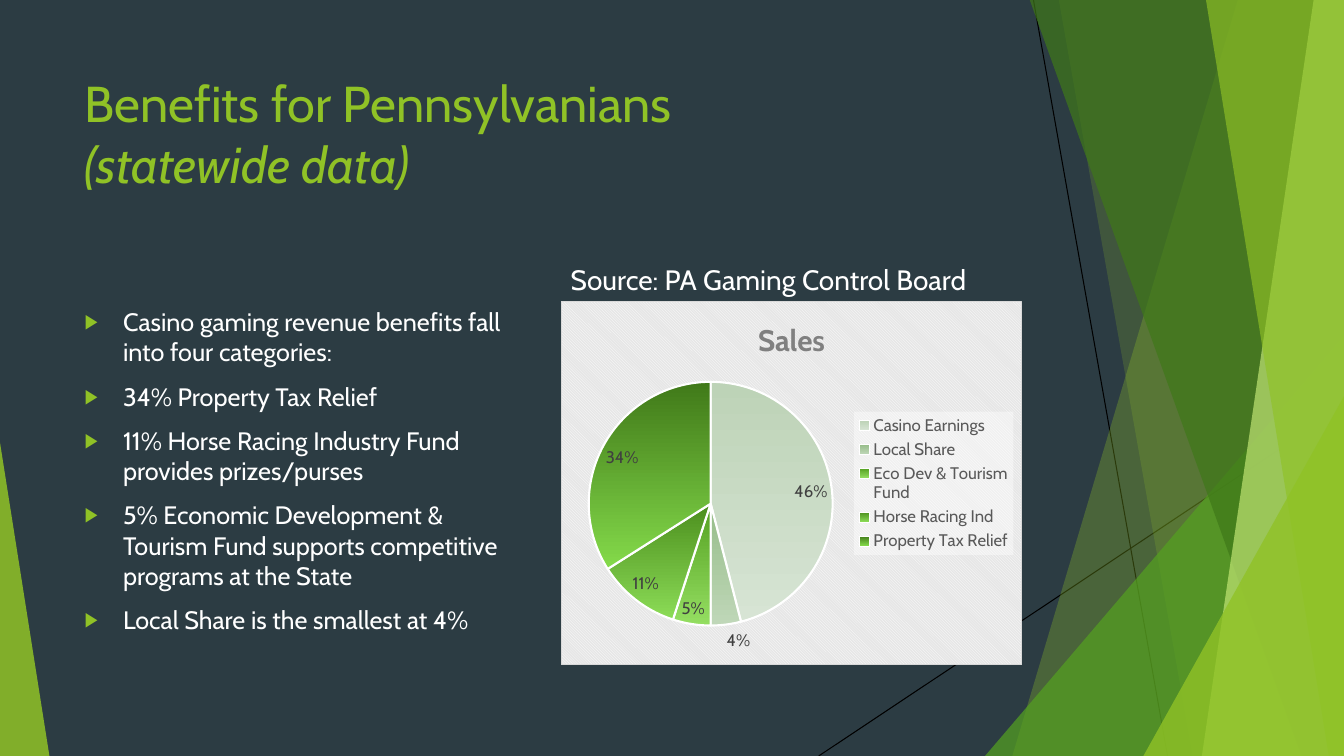
from pptx import Presentation, util as u, oxml
from pptx.chart.data import CategoryChartData
from pptx.dml.color import RGBColor
from pptx.enum import chart as ch, shapes, text
from pptx.oxml.ns import nsdecls, qn

HUES = {
    "back": "2C3C43", "lime": "90C226", "green": "54A021", "dark": "3F7819",
    "pale": "C0E474", "black": "000000", "white": "FFFFFF", "head": "808080",
    "key": "595959", "label": "404040", "edge": "D9D9D9", "panel": "E6E6E6",
}
FONT = "Cabin"
WIDE, HIGH = 13.33, 7.5

# top left, top right, foot right, foot left, hue, alpha
BANDS = [
    (12.28, 10.04, "lime", 30),
    (10.5, 11.83, "lime", 20),
    (10.21, 12.91, "dark", 70),
    (13.03, 11.92, "pale", 70),
    (11.96, 13.18, "lime", 65),
]

SLICES = [
    ("Casino Earnings", 0.46, "BDD3B7", "D7E4D4"),
    ("Local Share", 0.04, "95BC88", "BFD7B8"),
    ("Eco Dev & Tourism Fund", 0.05, "54A021", "94DE61"),
    ("Horse Racing Ind", 0.11, "4B8E1D", "8CDC57"),
    ("Property Tax Relief", 0.34, "407919", "84DA4A"),
]

ITEMS = [
    "Casino gaming revenue benefits fall into four categories:",
    "34% Property Tax Relief",
    "11% Horse Racing Industry Fund provides prizes/purses",
    "5% Economic Development & Tourism Fund supports competitive "
    "programs at the State",
    "Local Share is the smallest at 4%",
]


def rgb(hue):
    return RGBColor.from_string(HUES.get(hue, hue))


def style(font, size, hue, bold=False):
    font.name, font.size, font.bold = FONT, u.Pt(size), bold
    font.color.rgb = rgb(hue)


class Deck:
    """Holds the current slide and draws each kind of element on it."""

    def __init__(self):
        self.prs = Presentation()
        self.prs.slide_width = u.Inches(WIDE)
        self.prs.slide_height = u.Inches(HIGH)
        self.slide = self.prs.slides.add_slide(self.prs.slide_layouts[4])
        self.shapes = self.slide.shapes
        fill = self.slide.background.fill
        fill.solid()
        fill.fore_color.rgb = rgb("back")

    def line(self, *ends):
        line = self.shapes.add_connector(
            shapes.MSO_CONNECTOR.STRAIGHT, *map(u.Inches, ends))
        line.line.color.rgb = rgb("black")
        line.line.width = u.Pt(0.75)
        oxml.xmlchemy.OxmlElement  # noqa
        line.element.spPr.append(
            oxml.parse_xml(f'<a:effectLst {nsdecls("a")}/>'))

    def tint(self, shape, hue, alpha):
        """Fill a shape with a see-through colour and no outline."""
        shape.shadow.inherit = False
        shape.fill.solid()
        shape.fill.fore_color.rgb = rgb(hue)
        shape.line.fill.background()
        color = shape.element.spPr.find(qn("a:solidFill"))[0]
        color.append(oxml.parse_xml(
            f'<a:alpha {nsdecls("a")} val="{alpha * 1000}"/>'))

    def band(self, top, foot, hue, alpha):
        """Draw a facet from a slanted left edge to the slide's right edge."""
        pts = [(top, -0.01), (WIDE, -0.01), (WIDE, HIGH), (foot, HIGH)]
        pts = [(u.Inches(x), u.Inches(y)) for x, y in pts]
        form = self.shapes.build_freeform(*pts[0])
        form.add_line_segments(pts[1:], close=True)
        self.tint(form.convert_to_shape(), hue, alpha)

    def wedge(self, box, tip, hue, alpha):
        shape = self.shapes.add_shape(
            shapes.MSO_SHAPE.ISOSCELES_TRIANGLE, *map(u.Inches, box))
        shape.adjustments[0] = tip
        self.tint(shape, hue, alpha)

    def holder(self, idx, box, anchor):
        """Move a placeholder to its box, in front of what is drawn so far."""
        item = next(p for p in self.slide.placeholders
                    if p.placeholder_format.idx == idx)
        item.left, item.top, item.width, item.height = map(u.Inches, box)
        item.element.getparent().append(item.element)
        frame = item.text_frame
        frame.word_wrap = True
        frame.auto_size = text.MSO_AUTO_SIZE.NONE
        frame.vertical_anchor = anchor
        return frame

    def run(self, para, words, size, hue, slant=False):
        run = para.add_run()
        run.text = words
        style(run.font, size, hue)
        run.font.italic = slant

    def para(self, frame, first):
        para = frame.paragraphs[0] if first else frame.add_paragraph()
        para.alignment = text.PP_ALIGN.LEFT
        para.space_before = u.Pt(10)
        return para

    def bullets(self, frame, items):
        for num, words in enumerate(items):
            para = self.para(frame, num == 0)
            props = para._p.get_or_add_pPr()
            props.set("marL", str(u.Inches(0.38)))
            props.set("indent", str(u.Inches(-0.38)))
            for part in (
                f'buClr {nsdecls("a")}><a:srgbClr val="{HUES["lime"]}"/>'
                '</a:buClr>',
                f'buSzPct {nsdecls("a")} val="80000"/>',
                f'buChar {nsdecls("a")} char="▶"/>',
            ):
                props.append(oxml.parse_xml("<a:" + part))
            self.run(para, words, 18, "white")

    def pie(self, box, name, slices):
        data = CategoryChartData(number_format="0%")
        data.categories = [row[0] for row in slices]
        data.add_series(name, [row[1] for row in slices])
        chart = self.shapes.add_chart(
            ch.XL_CHART_TYPE.PIE, *map(u.Inches, box), data).chart
        style(chart.font, 10, "white")
        chart.has_title = True
        run = chart.chart_title.text_frame.paragraphs[0].add_run()
        run.text = name
        style(run.font, 21.3, "head", True)
        chart.chart_title.include_in_layout = False

        chart.has_legend = True
        chart.legend.position = ch.XL_LEGEND_POSITION.RIGHT
        chart.legend.include_in_layout = False
        style(chart.legend.font, 12, "key")

        plot = chart.plots[0]
        plot.vary_by_categories = True
        for num, (_, _, top, foot) in enumerate(slices):
            form = plot.series[0].points[num].format
            form.fill.gradient()
            form.fill.gradient_angle = 270
            for stop, hue in zip(form.fill.gradient_stops, (top, foot)):
                stop.color.rgb = rgb(hue)
            form.line.color.rgb = rgb("white")
            form.line.width = u.Pt(1.5)
        labels = plot.series[0].data_labels
        labels.show_value = True
        labels.show_percentage = False
        labels.number_format = "0%"
        labels.number_format_is_linked = False
        labels.position = ch.XL_LABEL_POSITION.BEST_FIT
        style(labels.font, 12, "label")

        self.panel(chart, "./c:txPr", f'''
            <a:pattFill prst="dkDnDiag">
              <a:fgClr><a:srgbClr val="{HUES["white"]}"/></a:fgClr>
              <a:bgClr><a:srgbClr val="{HUES["panel"]}"/></a:bgClr>
            </a:pattFill>
            <a:ln w="9525"><a:solidFill><a:srgbClr val="{HUES["edge"]}"/>
            </a:solidFill></a:ln>''')
        self.panel(chart, "./c:chart/c:legend/c:txPr", f'''
            <a:solidFill><a:srgbClr val="{HUES["white"]}">
            <a:alpha val="40000"/></a:srgbClr></a:solidFill>''')

    def panel(self, chart, spot, paint):
        """Put shape properties just before the text properties at spot."""
        chart.element.xpath(spot)[0].addprevious(oxml.parse_xml(
            f'<c:spPr {nsdecls("c", "a")}>{paint}</c:spPr>'))

    def save(self):
        for item in list(self.slide.placeholders):
            if not item.text_frame.text:
                item.element.getparent().remove(item.element)
        self.prs.save("out.pptx")


def main():
    deck = Deck()
    deck.line(10.25, 0, 11.58, HIGH)
    deck.line(WIDE, 4.03, 8.12, HIGH)
    for num, band in enumerate(BANDS):
        if num == 2:
            deck.wedge((9.77, 3.33, 3.56, 4.17), 1, "green", 72)
        deck.band(*band)
    deck.wedge((11.34, 3.93, 1.99, 3.57), 1, "lime", 80)
    deck.wedge((0, 4.39, 0.49, 3.11), 0, "lime", 85)

    anchor = text.MSO_ANCHOR
    title = deck.holder(0, (0.74, 0.67, 9.4, 1.44), anchor.TOP).paragraphs[0]
    title.alignment = text.PP_ALIGN.LEFT
    deck.run(title, "Benefits for Pennsylvanians", 36, "lime")
    title.add_line_break()
    deck.run(title, "(statewide data)", 36, "lime", True)
    deck.bullets(deck.holder(2, (0.74, 2.99, 4.58, 3.61), anchor.TOP), ITEMS)
    source = deck.holder(1, (5.56, 2.36, 4.58, 0.63), anchor.BOTTOM)
    deck.run(deck.para(source, True), "Source: PA Gaming Control Board",
             20, "white")
    deck.pie((5.56, 2.99, 4.58, 3.61), "Sales", SLICES)
    deck.save()


if __name__ == "__main__":
    main()
